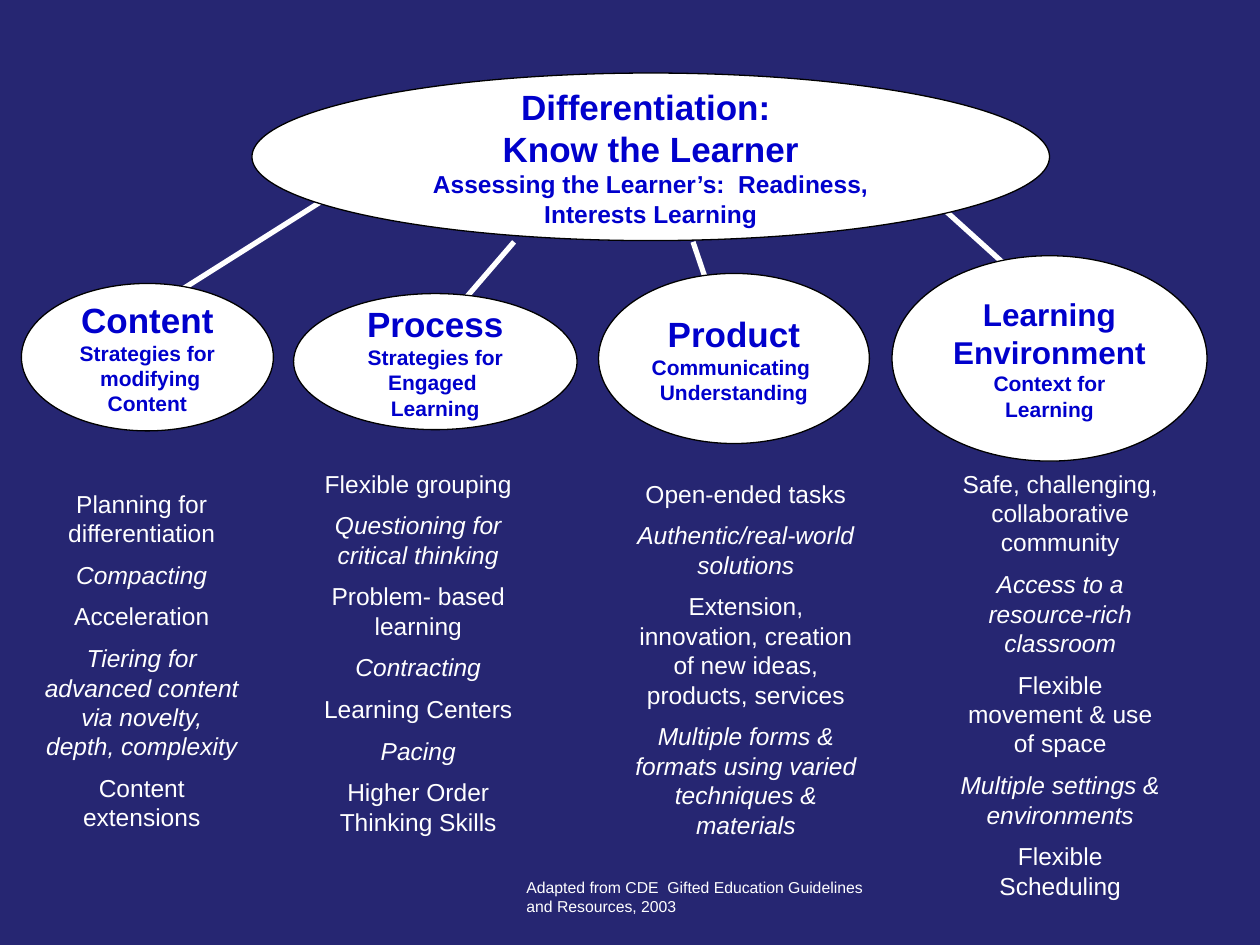
from dataclasses import dataclass

from lxml.etree import SubElement
from pptx import Presentation
from pptx.dml.color import RGBColor
from pptx.enum.shapes import MSO_CONNECTOR, MSO_SHAPE
from pptx.enum.text import MSO_ANCHOR, PP_ALIGN
from pptx.oxml.ns import qn
from pptx.util import Inches, Pt


@dataclass(frozen=True)
class Theme:
    font: str = "Arial"
    background: RGBColor = RGBColor(0x26, 0x26, 0x72)
    light: RGBColor = RGBColor(0xFF, 0xFF, 0xFF)
    outline: RGBColor = RGBColor(0, 0, 0)
    heading: RGBColor = RGBColor(0, 0, 0xCC)
    title_size: int = 20
    long_title_size: int = 18
    body_size: int = 14
    caption_size: int = 12
    credit_size: int = 9
    item_gap: int = 7


THEME = Theme()

# Each branch: oval box, title size, titles, captions, list box, list items
BRANCHES = [
    ((7.08, 2.03, 2.5, 1.63), THEME.long_title_size,
     ["Learning", "Environment"], ["Context for Learning"],
     (7.5, 3.67, 1.83, 3.99),
     ["Safe, challenging, collaborative community",
      "Access to a resource-rich classroom",
      "Flexible movement & use of space",
      "Multiple settings & environments",
      "Flexible Scheduling"]),
    ((0.17, 2.25, 2, 1.17), THEME.title_size,
     ["Content"], ["Strategies for", " modifying Content"],
     (0.25, 3.83, 1.75, 2.93),
     ["Planning for differentiation",
      "Compacting",
      "Acceleration",
      "Tiering for advanced content via novelty, depth, complexity",
      "Content extensions"]),
    ((2.33, 2.33, 2.25, 1.08), THEME.title_size,
     ["Process"], ["Strategies for Engaged ", "Learning"],
     (2.42, 3.67, 1.8, 3.64),
     ["Flexible grouping",
      "Questioning for critical thinking",
      "Problem- based learning",
      "Contracting",
      "Learning Centers",
      "Pacing",
      "Higher Order Thinking Skills"]),
    ((4.75, 2.17, 2.15, 1.35), THEME.title_size,
     ["Product"], ["Communicating ", "Understanding"],
     (4.92, 3.75, 2, 3.05),
     ["Open-ended tasks",
      "Authentic/real-world solutions",
      "Extension, innovation, creation of new ideas, products, services",
      "Multiple forms & formats using varied techniques & materials"]),
]

# Link ends: x and y at the branch, then x and y at the hub
LINKS = [
    (8.33, 2.42, 7.5, 1.67),
    (5.67, 2.42, 5.5, 1.92),
    (1.25, 2.42, 2.58, 1.58),
    (3.58, 2.5, 4.08, 1.92),
]


def add_paragraph(frame, index, text, size, color, align):
    para = frame.paragraphs[0] if index == 0 else frame.add_paragraph()
    para.text = text
    para.alignment = align
    para.font.name = THEME.font
    para.font.size = Pt(size)
    para.font.color.rgb = color
    return para


def add_link(page, ends):
    link = page.shapes.add_connector(
        MSO_CONNECTOR.STRAIGHT, *(Inches(value) for value in ends))
    link.line.color.rgb = THEME.light
    link.line.width = Pt(3)
    SubElement(link._element.spPr, qn("a:effectLst"))


def add_oval(page, box, title_size, titles, caption_size, captions):
    oval = page.shapes.add_shape(
        MSO_SHAPE.OVAL, *(Inches(value) for value in box))
    oval.shadow.inherit = False
    oval.fill.solid()
    oval.fill.fore_color.rgb = THEME.light
    oval.line.color.rgb = THEME.outline
    oval.line.width = Pt(0.75)
    frame = oval.text_frame
    frame.word_wrap = True
    frame.vertical_anchor = MSO_ANCHOR.MIDDLE
    lines = ([(text, title_size) for text in titles]
             + [(text, caption_size) for text in captions])
    for index, (text, size) in enumerate(lines):
        para = add_paragraph(frame, index, text, size, THEME.heading,
                             PP_ALIGN.CENTER)
        para.font.bold = True


def add_text_frame(page, box):
    frame = page.shapes.add_textbox(
        *(Inches(value) for value in box)).text_frame
    frame.word_wrap = True
    return frame


def add_list(page, box, items):
    frame = add_text_frame(page, box)
    for index, text in enumerate(items):
        para = add_paragraph(frame, index, text, THEME.body_size,
                             THEME.light, PP_ALIGN.CENTER)
        # Every second item is italic
        para.font.italic = index % 2 == 1
        if index:
            para.space_before = Pt(THEME.item_gap)


def add_credit(page, box, text):
    add_paragraph(add_text_frame(page, box), 0, text, THEME.credit_size,
                  THEME.light, PP_ALIGN.LEFT)


def main():
    deck = Presentation()
    deck.slide_width, deck.slide_height = Inches(10), Inches(7.5)
    page = deck.slides.add_slide(deck.slide_layouts[6])
    page.background.fill.solid()
    page.background.fill.fore_color.rgb = THEME.background

    # Links lie behind the ovals
    for ends in LINKS:
        add_link(page, ends)

    # Hub
    add_oval(page, (2, 0.58, 6.33, 1.33), THEME.title_size,
             ["Differentiation: ", "Know the Learner"], THEME.body_size,
             ["Assessing the Learner’s:  Readiness, Interests Learning"])

    # Branches with their lists
    for oval_box, size, titles, captions, list_box, items in BRANCHES:
        add_oval(page, oval_box, size, titles, THEME.caption_size, captions)
        add_list(page, list_box, items)

    add_credit(page, (4.08, 6.92, 3.08, 0.4),
               "Adapted from CDE  Gifted Education Guidelines "
               "and Resources, 2003")
    deck.save("out.pptx")


if __name__ == "__main__":
    main()
